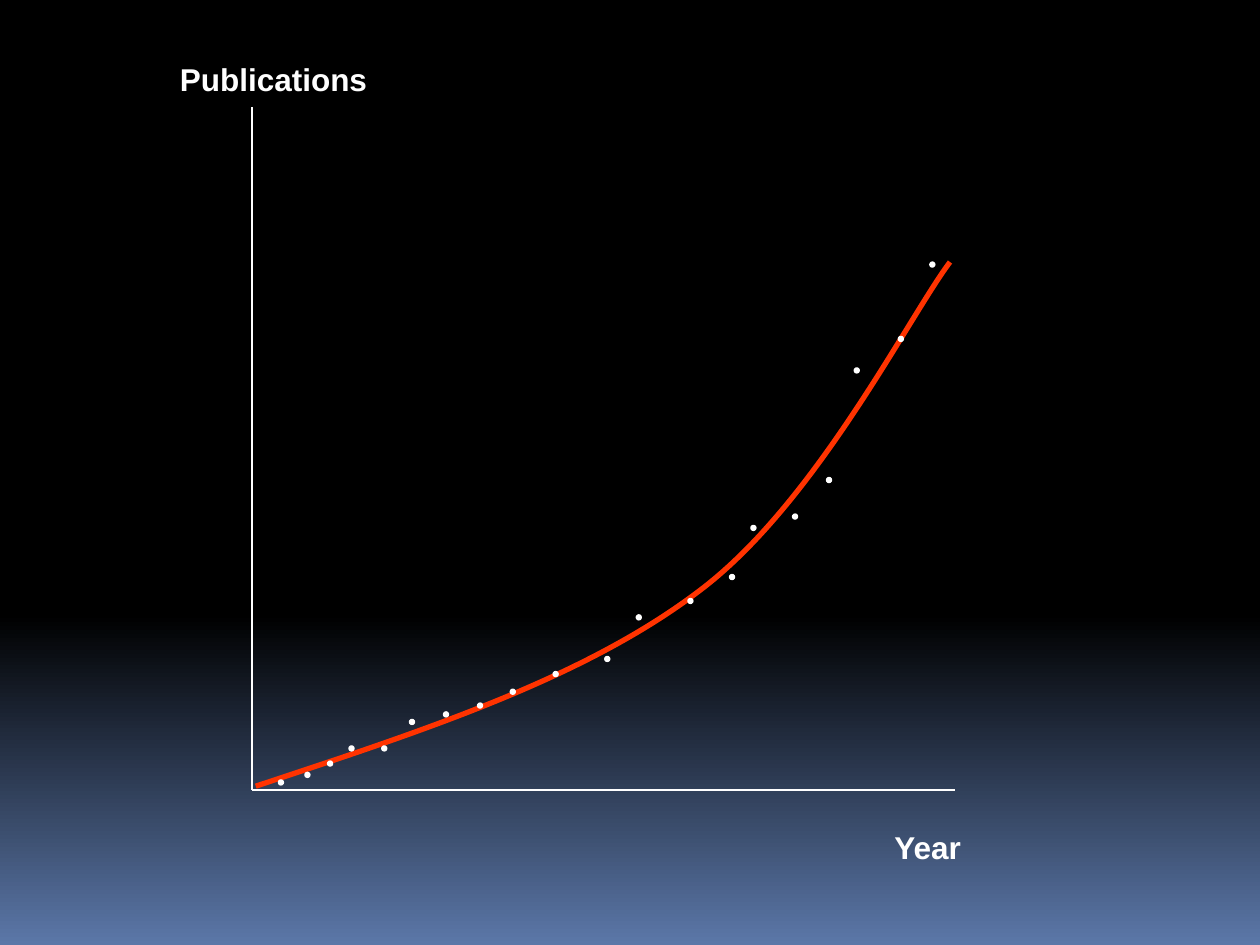
import copy
from dataclasses import dataclass

import pptx
import pptx.util
from pptx.dml.color import RGBColor
from pptx.enum.shapes import MSO_CONNECTOR, MSO_SHAPE
from pptx.enum.text import MSO_AUTO_SIZE
from pptx.oxml.ns import qn
from pptx.oxml.xmlchemy import OxmlElement
from pptx.util import Inches


@dataclass(frozen=True)
class Theme:
    ink: RGBColor = RGBColor.from_string("FFFFFF")
    trend: RGBColor = RGBColor.from_string("FF3300")
    dark: RGBColor = RGBColor.from_string("000000")
    glow: RGBColor = RGBColor.from_string("5B77A8")
    font: str = "Arial"
    label_size: float = 18
    thin: float = 0.75
    thick: float = 3


@dataclass(frozen=True)
class Box:
    left: float
    top: float
    width: float
    height: float

    @property
    def right(self):
        return self.left + self.width

    @property
    def bottom(self):
        return self.top + self.height

    def place(self, x, y):
        """Slide position of a point measured right and up from the axes' origin."""
        return Inches(self.left + x), Inches(self.bottom - y)


THEME = Theme()
DOT_SIZE = 0.04

# Inches right of and above the origin
PUBLICATIONS = [
    (0.23, 0.06), (0.44, 0.12), (0.62, 0.21), (0.79, 0.33), (1.05, 0.33),
    (1.27, 0.54), (1.54, 0.60), (1.81, 0.67), (2.07, 0.78), (2.41, 0.92),
    (2.82, 1.04), (3.07, 1.37), (3.48, 1.50), (3.81, 1.69), (3.98, 2.08),
    (4.31, 2.17), (4.58, 2.46), (4.80, 3.33), (5.15, 3.58), (5.40, 4.17),
]
# Start point, then two control points and an end point per Bezier segment
TREND = [
    (0.03, 0.03),
    (1.33, 0.46), (2.63, 0.88), (3.55, 1.58),
    (4.47, 2.27), (5.21, 3.75), (5.54, 4.19),
]


def set_line(shape, color, width):
    shape.line.color.rgb = color
    shape.line.width = pptx.util.Pt(width)


def paint_background(s):
    fill = s.background.fill
    fill.gradient()
    fill.gradient_angle = 270
    stop_list = next(s.element.iter(qn("a:gsLst")))
    stop_list.insert(1, copy.deepcopy(stop_list[0]))
    stops = [(0, THEME.dark), (0.65, THEME.dark), (1, THEME.glow)]
    for stop, (position, color) in zip(fill.gradient_stops, stops):
        stop.position = position
        stop.color.rgb = color


def add_axes(s, box):
    origin = box.place(0, 0)
    for end in (box.place(0, box.height), box.place(box.width, 0)):
        axis = s.shapes.add_connector(MSO_CONNECTOR.STRAIGHT, *origin, *end)
        set_line(axis, THEME.ink, THEME.thin)
        axis._element.spPr.append(OxmlElement("a:effectLst"))


def add_label(s, text, box):
    tb = s.shapes.add_textbox(*map(Inches, (box.left, box.top, box.width, box.height)))
    tf = tb.text_frame
    tf.word_wrap = True
    tf.auto_size = MSO_AUTO_SIZE.SHAPE_TO_FIT_TEXT
    r = tf.paragraphs[0].add_run()
    r.text = text
    style = {"name": THEME.font, "size": pptx.util.Pt(THEME.label_size), "bold": True}
    for name, value in style.items():
        setattr(r.font, name, value)
    r.font.color.rgb = THEME.ink


def add_trend(s, box):
    start, *rest = [box.place(*point) for point in TREND]
    builder = s.shapes.build_freeform(*start)
    builder.add_line_segments(rest, close=False)
    sp = builder.convert_to_shape()
    sp.shadow.inherit = False
    sp.fill.background()
    set_line(sp, THEME.trend, THEME.thick)

    # Every three straight segments become one Bezier segment
    segments = list(sp._element.iter(qn("a:lnTo")))
    for i in range(0, len(segments), 3):
        curve = OxmlElement("a:cubicBezTo")
        segments[i].addprevious(curve)
        for segment in segments[i:i + 3]:
            curve.append(segment[0])
            segment.getparent().remove(segment)


def add_dots(s, box):
    size = Inches(DOT_SIZE)
    for point in PUBLICATIONS:
        x, y = box.place(*point)
        dot = s.shapes.add_shape(
            MSO_SHAPE.OVAL, x - size // 2, y - size // 2, size, size)
        dot.shadow.inherit = False
        dot.fill.solid()
        dot.fill.fore_color.rgb = THEME.ink
        set_line(dot, THEME.ink, THEME.thin)


def add_plot(s, box):
    add_axes(s, box)
    add_label(s, "Publications", Box(box.left - 0.67, box.top - 0.42, 1.83, 0.4))
    add_label(s, "Year", Box(box.right - 0.58, box.bottom + 0.25, 0.92, 0.4))
    add_trend(s, box)
    add_dots(s, box)


def main():
    prs = pptx.Presentation()
    prs.slide_width, prs.slide_height = Inches(10), Inches(7.5)
    s = prs.slides.add_slide(prs.slide_layouts[6])
    paint_background(s)
    add_plot(s, Box(2, 0.85, 5.58, 5.42))
    prs.save("out.pptx")


if __name__ == "__main__":
    main()
